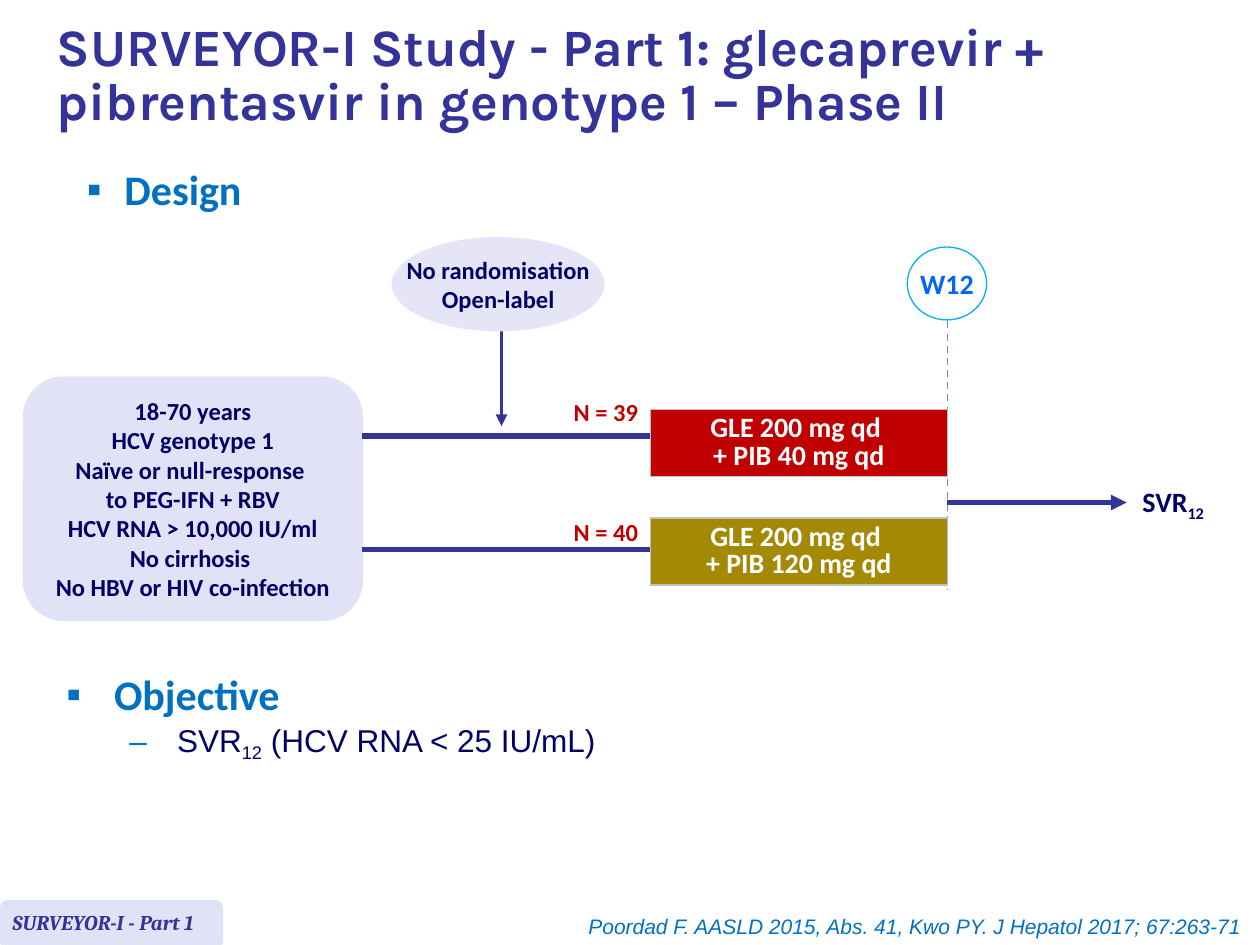
"""Builds the design and objective slide of the SURVEYOR-I Part 1 study."""
from lxml import etree
from pptx import Presentation
from pptx.dml.color import RGBColor
from pptx.enum.dml import MSO_LINE
from pptx.enum.shapes import MSO_CONNECTOR, MSO_SHAPE
from pptx.enum.text import MSO_ANCHOR, MSO_AUTO_SIZE, PP_ALIGN
from pptx.oxml.ns import qn
from pptx.util import Cm, Pt

LEFT, CENTER, RIGHT = PP_ALIGN.LEFT, PP_ALIGN.CENTER, PP_ALIGN.RIGHT
TOP, MIDDLE = MSO_ANCHOR.TOP, MSO_ANCHOR.MIDDLE
OVAL, ROUNDED = MSO_SHAPE.OVAL, MSO_SHAPE.ROUNDED_RECTANGLE
STRAIGHT, DASH = MSO_CONNECTOR.STRAIGHT, MSO_LINE.DASH
NO_FIT = MSO_AUTO_SIZE.NONE

COLORS = {
    "indigo": "333399", "navy": "000066", "blue": "0070C0", "bright": "0066FF",
    "cyan": "00B0F0", "lavender": "E2E2F6", "pale": "E5E5F7", "violet": "7E7ED4",
    "red": "C00000", "olive": "A38904", "silver": "C0C0C0", "white": "FFFFFF",
}
RGB = {name: RGBColor.from_string(value) for name, value in COLORS.items()}


def write(frame, lines, size, color, font="Calibri", align=CENTER, bold=True,
          italic=False, anchor=TOP, wrap=True, spacing=None, bullets=()):
    """Fill a text frame; parts between bars are subscripts."""
    frame.word_wrap = wrap
    frame.vertical_anchor = anchor
    for index, line in enumerate(lines):
        para = frame.paragraphs[0] if index == 0 else frame.add_paragraph()
        para.alignment = align
        if spacing:
            para.line_spacing = spacing
        if bullets:
            symbol, margin, hanging = bullets[index]
            props = para._p.get_or_add_pPr()
            props.set("marL", str(Cm(margin)))
            props.set("indent", str(-Cm(hanging)))
            tint = etree.SubElement(props, qn("a:buClr"))
            etree.SubElement(tint, qn("a:srgbClr"), val=COLORS["blue"])
            etree.SubElement(props, qn("a:buFont"), typeface="Arial")
            etree.SubElement(props, qn("a:buChar"), char=symbol)
        for position, part in enumerate(line.split("|")):
            if position == 0:
                para.text = part
                span = para.runs[0]
            else:
                span = para.add_run()
                span.text = part
            if position % 2:
                span._r.get_or_add_rPr().set("baseline", "-25000")
        for span in para.runs:
            span.font.name = font
            span.font.size = Pt(size)
            span.font.bold = bold
            span.font.italic = italic
            span.font.color.rgb = RGB[color]


def connect(start, end, color, width, dash=None, arrow=False):
    """Draw a straight connector between two points in centimetres."""
    line = page.shapes.add_connector(STRAIGHT, *map(Cm, start + end))
    line.line.color.rgb = RGB[color]
    line.line.width = Pt(width)
    if dash:
        line.line.dash_style = dash
    if arrow:
        etree.SubElement(line.line._get_or_add_ln(), qn("a:tailEnd"), type="triangle")
    etree.SubElement(line._element.spPr, qn("a:effectLst"))


deck = Presentation()
deck.slide_width, deck.slide_height = Cm(25.4), Cm(19.05)
page = deck.slides.add_slide(deck.slide_layouts[5])

title = page.shapes.title
title.left, title.top, title.width, title.height = Cm(0.89), Cm(0.2), Cm(24.21), Cm(2.72)
write(title.text_frame,
      ["SURVEYOR-I Study - Part 1: glecaprevir + pibrentasvir in genotype 1 – Phase II"],
      30, "indigo", "Karla", LEFT, anchor=MIDDLE, spacing=0.85)
title.text_frame.auto_size = NO_FIT

connect((10.11, 6.68), (10.11, 8.59), "indigo", 2.25, arrow=True)
connect((19.1, 5.99), (19.1, 11.89), "violet", 1, dash=DASH)
connect((19.1, 10.13), (22.71, 10.13), "indigo", 3, arrow=True)

criteria = [
    "18-70 years", "HCV genotype 1", "Naïve or null-response ", "to PEG-IFN + RBV",
    "HCV RNA > 10,000 IU/ml", "No cirrhosis ", "No HBV or HIV co-infection",
]
panels = [
    (OVAL, (7.9, 4.78, 4.29, 1.9), "pale", None,
     ["No randomisation", "Open-label"], 14, "navy", False),
    (ROUNDED, (0.46, 7.59, 6.86, 4.93), "lavender", None, criteria, 14, "navy", True),
    (OVAL, (18.29, 4.98, 1.6, 1.47), "white", "cyan", ["W12"], 16, "bright", False),
    (ROUNDED, (0, 18.14, 4.5, 0.99), "lavender", None, [], 12, "indigo", True),
]
for kind, bounds, fill, outline, lines, size, color, wrap in panels:
    panel = page.shapes.add_shape(kind, *map(Cm, bounds))
    panel.shadow.inherit = False
    panel.fill.solid()
    panel.fill.fore_color.rgb = RGB[fill]
    if outline:
        panel.line.color.rgb = RGB[outline]
        panel.line.width = Pt(0.75)
    else:
        panel.line.fill.background()
    write(panel.text_frame, lines, size, color, anchor=MIDDLE, wrap=wrap)

arms = [
    ("N = 39", 7.87, 8.79, 8.26, "+ PIB 40 mg qd", "red"),
    ("N = 40", 10.29, 11.07, 10.44, "+ PIB 120 mg qd", "olive"),
]
for count, count_top, line_y, table_top, dose, fill in arms:
    connect((7.29, line_y), (13.2, line_y), "indigo", 3)
    box = page.shapes.add_textbox(Cm(11.3), Cm(count_top), Cm(1.83), Cm(0.86))
    write(box.text_frame, [count], 14, "red", wrap=False)

    table = page.shapes.add_table(1, 1, Cm(13.11), Cm(table_top), Cm(5.99), Cm(1.35)).table
    table.first_row = table.horz_banding = False
    cell = table.cell(0, 0)
    cell_props = cell._tc.get_or_add_tcPr()
    for side in ("lnL", "lnR", "lnT", "lnB"):
        border = etree.SubElement(cell_props, qn(f"a:{side}"), w=str(Pt(1)))
        paint = etree.SubElement(border, qn("a:solidFill"))
        etree.SubElement(paint, qn("a:srgbClr"), val=COLORS["silver"])
    cell.fill.solid()
    cell.fill.fore_color.rgb = RGB[fill]
    write(cell.text_frame, [f"GLE 200 mg qd \v{dose}"], 16, "white", spacing=0.8)
    cell.vertical_anchor = MIDDLE

labels = [
    ((22.78, 9.65, 1.83, 0.94), "SVR|12", 16, "navy", "Calibri", LEFT, True, False, False),
    ((9.7, 18.29, 15.7, 0.76),
     "Poordad F. AASLD 2015, Abs. 41, Kwo PY. J Hepatol 2017; 67:263-71 ",
     12, "blue", "Arial", RIGHT, False, True, True),
    ((0, 18.21, 4.65, 0.76), "SURVEYOR-I - Part 1",
     12, "indigo", "Cambria", LEFT, True, True, True),
]
for bounds, text, size, color, font, align, bold, italic, wrap in labels:
    box = page.shapes.add_textbox(*map(Cm, bounds))
    write(box.text_frame, [text], size, color, font, align, bold, italic, wrap=wrap)

design = page.shapes.add_textbox(Cm(1.5), Cm(3.17), Cm(4.39), Cm(1.19))
write(design.text_frame, ["Design"], 24, "blue", align=LEFT, bullets=[("▪", 0.76, 0.76)])

objective = page.shapes.add_textbox(Cm(1.09), Cm(13.36), Cm(19.81), Cm(2.95))
write(objective.text_frame, ["Objective", "SVR|12| (HCV RNA < 25 IU/mL)"], 24, "blue",
      align=LEFT, bullets=[("▪", 0.96, 0.96), ("–", 2.23, 0.96)])
endpoint = objective.text_frame.paragraphs[1]
endpoint.level = 1
endpoint.space_before = Pt(0.7)
for span in endpoint.runs:
    span.font.name = "Arial"
    span.font.size = Pt(18)
    span.font.bold = False
    span.font.color.rgb = RGB["navy"]

deck.save("out.pptx")
